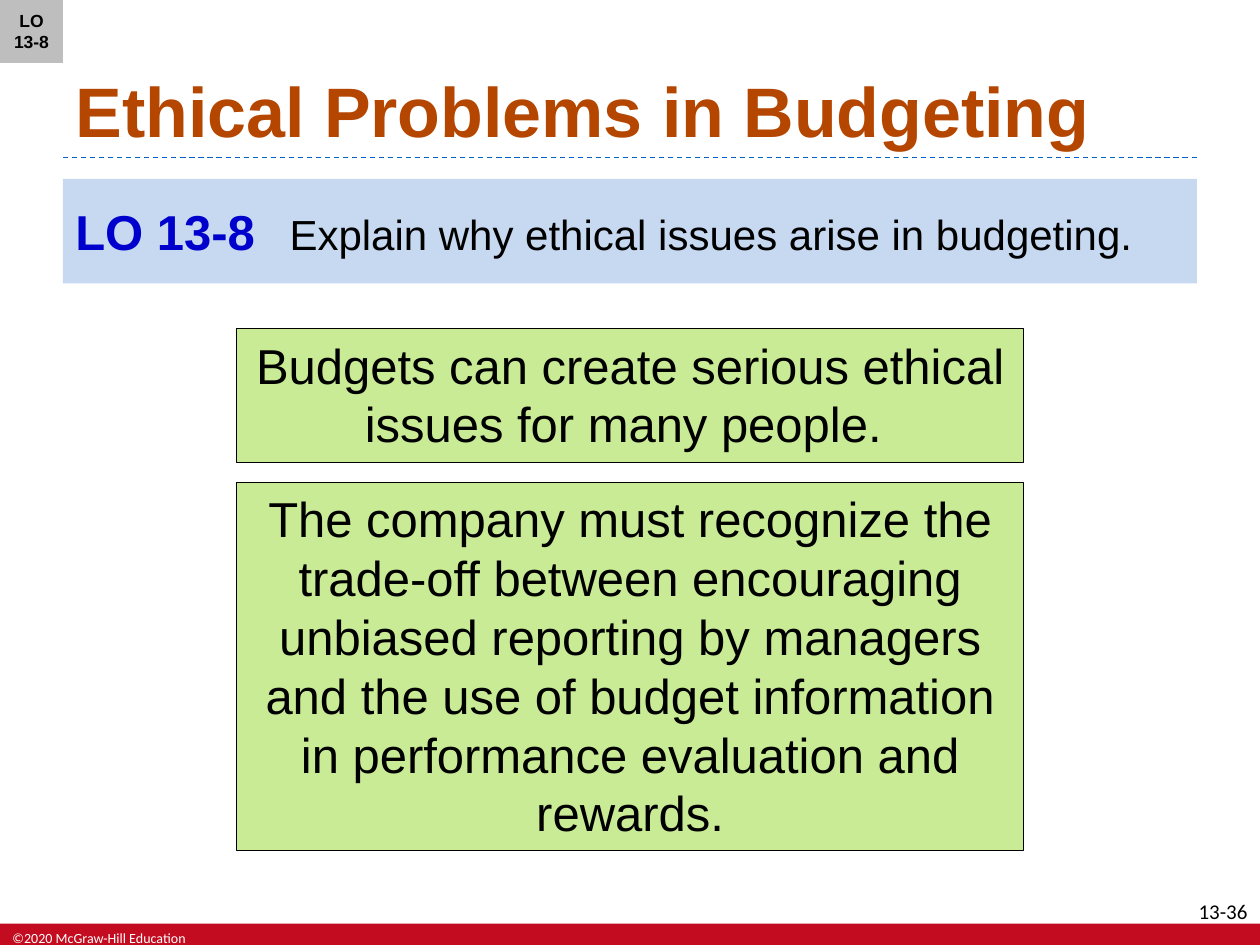
from pptx import Presentation
from pptx.dml.color import RGBColor
from pptx.enum.dml import MSO_LINE
from pptx.enum.shapes import MSO_CONNECTOR, MSO_SHAPE
from pptx.enum.text import MSO_ANCHOR, MSO_AUTO_SIZE, PP_ALIGN
from pptx.oxml.ns import qn
from pptx.util import Inches, Pt

LEFT, CENTER, RIGHT = PP_ALIGN.LEFT, PP_ALIGN.CENTER, PP_ALIGN.RIGHT
TOP, MIDDLE, BOTTOM = MSO_ANCHOR.TOP, MSO_ANCHOR.MIDDLE, MSO_ANCHOR.BOTTOM
TITLE_ONLY = 5

# Content
TITLE = "Ethical Problems in Budgeting"
OBJECTIVE = ("LO 13-8", "\tExplain why ethical issues arise in budgeting.")
TAG = "LO 13-8"
STATEMENTS = [  # text, top, height
    ("Budgets can create serious ethical issues for many people. ", 2.61, 1.06),
    ("The company must recognize the trade-off between encouraging unbiased "
     "reporting by managers and the use of budget information in performance "
     "evaluation and rewards.", 3.83, 2.92),
]
COPYRIGHT = "©2020 McGraw-Hill Education"
PAGE_NUMBER = "13-36"

COLORS = {
    "title": "B44600", "rule": "0064C8", "objective": "C6D9F1",
    "objective_label": "0000CC", "statement": "C9EB95", "tag": "BEBEBE",
    "footer": "C30C20", "black": "000000", "white": "FFFFFF",
}
WIDTH, HEIGHT = 10, 7.5
MARGIN = 0.5
RULE_Y = 1.25
FOOTER_TOP = 7.33
STATEMENT_WIDTH = 6.25
OBJECTIVE_INDENT = 1.7


def color(name):
    return RGBColor.from_string(COLORS[name])


def add_box(slide, left, top, width, height, fill, line=None):
    shape = slide.shapes.add_shape(
        MSO_SHAPE.RECTANGLE, Inches(left), Inches(top), Inches(width), Inches(height))
    shape.shadow.inherit = False
    shape.fill.solid()
    shape.fill.fore_color.rgb = color(fill)
    if line:
        shape.line.color.rgb = color(line)
        shape.line.width = Pt(0.75)
    else:
        shape.line.fill.background()
    return shape


def add_label(slide, left, top, width, height):
    return slide.shapes.add_textbox(
        Inches(left), Inches(top), Inches(width), Inches(height))


def write(shape, runs, align=LEFT, anchor=TOP, after=0, font="Arial"):
    """Write one paragraph; each run is (text, size, color name, bold)."""
    frame = shape.text_frame
    frame.word_wrap = True
    frame.auto_size = MSO_AUTO_SIZE.NONE
    frame.vertical_anchor = anchor
    paragraph = frame.paragraphs[0]
    paragraph.alignment = align
    paragraph.space_after = Pt(after)
    for text, size, color_name, bold in runs:
        run = paragraph.add_run()
        run.text = text
        run.font.name = font
        run.font.size = Pt(size)
        run.font.bold = bold
        run.font.color.rgb = color(color_name)
    return paragraph


presentation = Presentation()
presentation.slide_width = Inches(WIDTH)
presentation.slide_height = Inches(HEIGHT)
slide = presentation.slides.add_slide(presentation.slide_layouts[TITLE_ONLY])
content_width = WIDTH - 2 * MARGIN

# Footer band, copyright and page number
add_box(slide, 0, FOOTER_TOP, WIDTH, HEIGHT - FOOTER_TOP, "footer")
write(add_label(slide, 0, FOOTER_TOP, 1.6, HEIGHT - FOOTER_TOP),
      [(COPYRIGHT, 8, "white", False)], font="Calibri")
write(add_label(slide, 9.3, 7.08, 0.7, 0.2),
      [(PAGE_NUMBER, 12, "black", False)], align=RIGHT, font="Calibri")

# Title and dashed rule
title = slide.shapes.title
title.left, title.top = Inches(MARGIN), Inches(0.05)
title.width, title.height = Inches(content_width), Inches(RULE_Y - 0.05)
write(title, [(TITLE, 40, "title", True)], anchor=BOTTOM)
rule = slide.shapes.add_connector(
    MSO_CONNECTOR.STRAIGHT, Inches(MARGIN), Inches(RULE_Y),
    Inches(WIDTH - MARGIN), Inches(RULE_Y))
rule.line.color.rgb = color("rule")
rule.line.width = Pt(0.75)
rule.line.dash_style = MSO_LINE.DASH
rule._element.spPr.append(rule._element.makeelement(qn("a:effectLst"), {}))

# Learning objective, with a hanging indent after its label
objective = add_box(slide, MARGIN, 1.42, content_width, 0.83, "objective")
label, description = OBJECTIVE
paragraph = write(
    objective,
    [(label, 28, "objective_label", True), (description, 24, "black", False)],
    anchor=MIDDLE, after=6)
properties = paragraph._p.get_or_add_pPr()
properties.set("marL", str(Inches(OBJECTIVE_INDENT)))
properties.set("indent", str(-Inches(OBJECTIVE_INDENT)))

# Statements, centred on the slide
for text, top, height in STATEMENTS:
    statement = add_box(slide, (WIDTH - STATEMENT_WIDTH) / 2, top,
                        STATEMENT_WIDTH, height, "statement", "black")
    write(statement, [(text, 28, "black", False)], CENTER, after=6)

# Corner tag
tag = add_box(slide, 0, 0, 0.5, 0.5, "tag")
write(tag, [(TAG, 10, "black", True)], CENTER, MIDDLE, after=6)

presentation.save("out.pptx")
